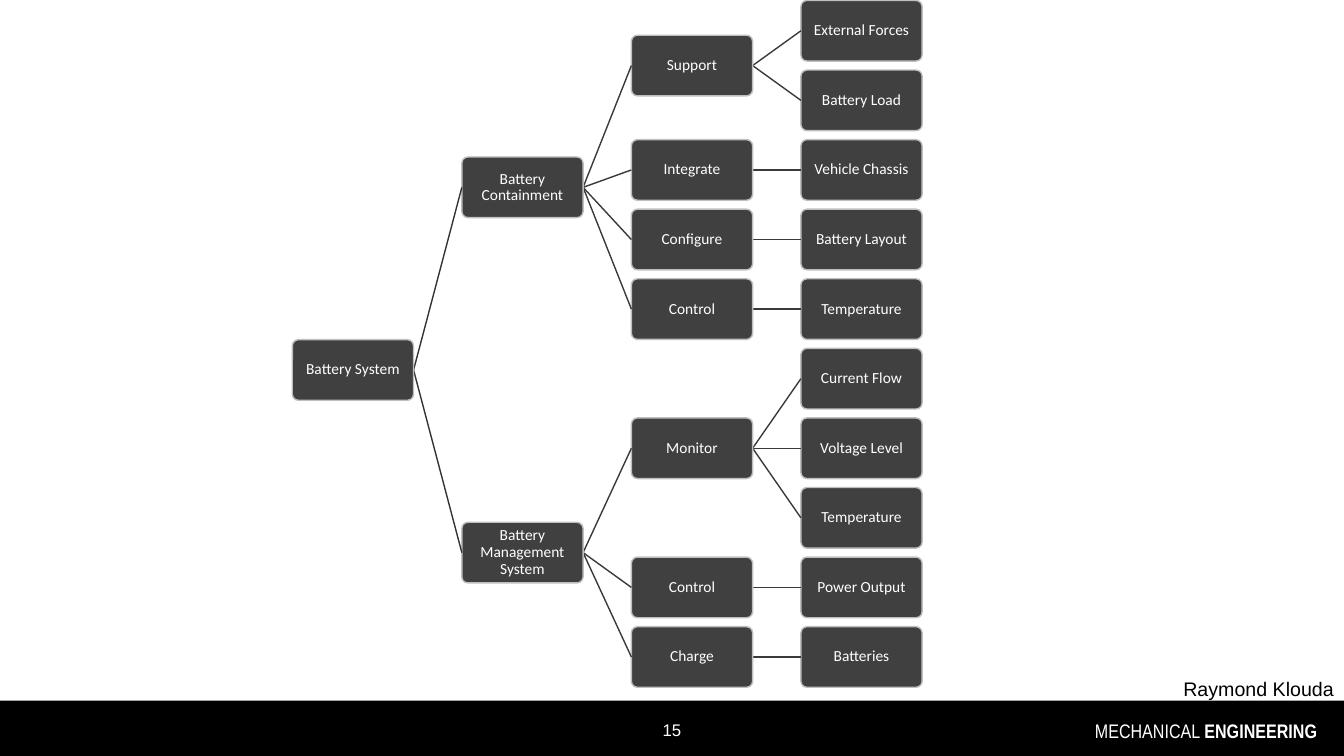
from itertools import count
from lxml import etree
from pptx import Presentation
from pptx.dml.color import RGBColor
from pptx.enum import shapes, text
from pptx.oxml import ns
from pptx.util import Pt

COLORS = {"bar": "000000", "box": "404040", "edge": "BFBFBF",
          "trunk": "333333", "branch": "3A3A3A", "light": "FFFFFF", "dark": "000000"}
BOX_W, BOX_H = 86.6, 43.3
COL_X, COL_STEP = 208.8, 121.1
ROW_Y, ROW_STEP = 22, 49.7

TREE = ("Battery System", [
    ("Battery Containment", [
        ("Support", [("External Forces", []), ("Battery Load", [])]),
        ("Integrate", [("Vehicle Chassis", [])]),
        ("Configure", [("Battery Layout", [])]),
        ("Control", [("Temperature", [])])]),
    ("Battery Management System", [
        ("Monitor", [("Current Flow", []), ("Voltage Level", []), ("Temperature", [])]),
        ("Control", [("Power Output", [])]),
        ("Charge", [("Batteries", [])])])])

prs = Presentation()
prs.slide_width, prs.slide_height = Pt(960), Pt(540)
s = prs.slides.add_slide(prs.slide_layouts[6])
rows = count()


def write(sp, runs, size, font, color, align, anchor):
    tf = sp.text_frame
    tf.word_wrap = True
    tf.vertical_anchor = anchor
    p = tf.paragraphs[0]
    p.alignment = align
    for words, bold in runs:
        r = p.add_run()
        r.text = words
        r.font.size, r.font.name, r.font.bold = Pt(size), font, bold
        r.font.color.rgb = RGBColor.from_string(COLORS[color])
    return tf


def draw_branch(node, depth):
    name, children = node
    x = COL_X + depth * COL_STEP
    child_ys = [draw_branch(child, depth + 1) for child in children]
    if child_ys:
        y = (child_ys[0] + child_ys[-1]) / 2
    else:
        y = ROW_Y + next(rows) * ROW_STEP
    for child_y in child_ys:
        line = s.shapes.add_connector(shapes.MSO_CONNECTOR.STRAIGHT, Pt(x + BOX_W), Pt(y),
                                      Pt(x + COL_STEP), Pt(child_y))
        line.line.width = Pt(1)
        line.line.color.rgb = RGBColor.from_string(COLORS["branch" if depth else "trunk"])
        etree.SubElement(line._element.spPr, ns.qn("a:effectLst"))
    sp = s.shapes.add_shape(shapes.MSO_SHAPE.ROUNDED_RECTANGLE, Pt(x), Pt(y - BOX_H / 2),
                            Pt(BOX_W), Pt(BOX_H))
    sp.adjustments[0] = 0.1
    sp.shadow.inherit = False
    sp.fill.solid()
    sp.fill.fore_color.rgb = RGBColor.from_string(COLORS["box"])
    sp.line.color.rgb = RGBColor.from_string(COLORS["edge"])
    sp.line.width = Pt(1)
    tf = write(sp, [(name, False)], 11, "Calibri", "light",
               text.PP_ALIGN.CENTER, text.MSO_ANCHOR.MIDDLE)
    tf.margin_left = tf.margin_right = tf.margin_top = tf.margin_bottom = Pt(1)
    tf.paragraphs[0].line_spacing = 0.9
    return y


bar = s.shapes.add_shape(shapes.MSO_SHAPE.RECTANGLE, 0, Pt(500.4), Pt(960), Pt(39.6))
bar.shadow.inherit = False
bar.fill.solid()
bar.fill.fore_color.rgb = RGBColor.from_string(COLORS["bar"])
bar.line.fill.background()

department = s.shapes.add_textbox(Pt(732), Pt(510), Pt(216), Pt(28.8))
write(department, [("MECHANICAL ", False), ("ENGINEERING", True)], 14, "Arial Narrow",
      "light", text.PP_ALIGN.RIGHT, text.MSO_ANCHOR.TOP)

number = s.shapes.add_textbox(Pt(372), Pt(507), Pt(216), Pt(28.8))
write(number, [("15", False)], 12, "Arial", "light",
      text.PP_ALIGN.CENTER, text.MSO_ANCHOR.MIDDLE)

author = s.shapes.add_textbox(Pt(708), Pt(481.7), Pt(252), Pt(18))
tf = write(author, [("Raymond Klouda", False)], 14, "Arial", "dark",
           text.PP_ALIGN.RIGHT, text.MSO_ANCHOR.TOP)
tf.paragraphs[0].line_spacing = 0.9

draw_branch(TREE, 0)

prs.save("out.pptx")
